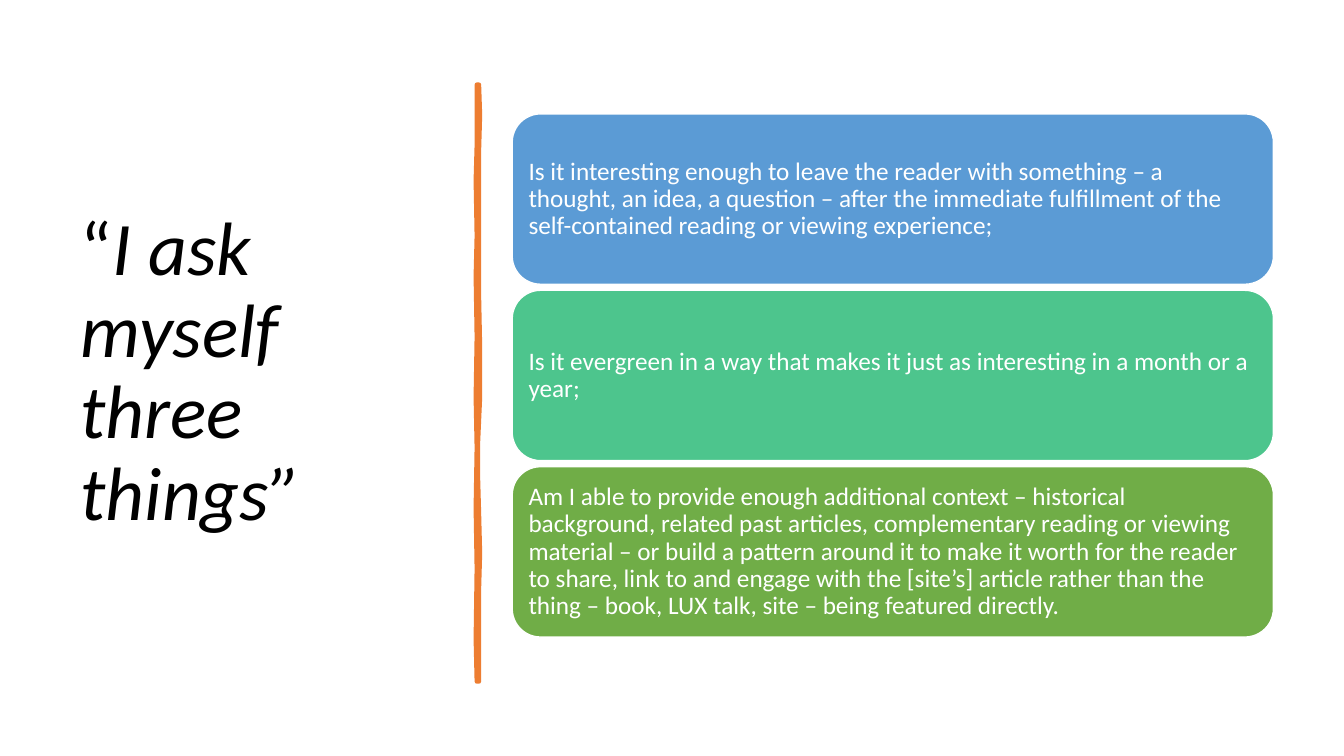
import pptx
import pptx.util
import pptx.dml.color
import pptx.enum.shapes
import pptx.enum.text

Inches, Pt = pptx.util.Inches, pptx.util.Pt
RGBColor = pptx.dml.color.RGBColor
MSO_ANCHOR = pptx.enum.text.MSO_ANCHOR
PP_ALIGN = pptx.enum.text.PP_ALIGN

BLACK = RGBColor(0x00, 0x00, 0x00)
WHITE = RGBColor(0xFF, 0xFF, 0xFF)
ORANGE = RGBColor(0xED, 0x7D, 0x31)
BLUE = RGBColor(0x5B, 0x9B, 0xD5)
TEAL = RGBColor(0x4D, 0xC5, 0x8D)
GREEN = RGBColor(0x70, 0xAD, 0x47)
FONT = "Calibri"

QUESTIONS = [
    (BLUE, "Is it interesting enough to leave the reader with something – a thought, "
           "an idea, a question – after the immediate fulfillment of the "
           "self-contained reading or viewing experience;"),
    (TEAL, "Is it evergreen in a way that makes it just as interesting in a month "
           "or a year;"),
    (GREEN, "Am I able to provide enough additional context – historical background, "
            "related past articles, complementary reading or viewing material – or "
            "build a pattern around it to make it worth for the reader to share, link "
            "to and engage with the [site’s] article rather than the thing – book, "
            "LUX talk, site – being featured directly."),
]

# Edges of the brush stroke: (distance down, offset from the centre), in inches
RIGHT_EDGE = [(0, 0.01), (0.3, 0.02), (0.65, 0.01), (1.4, 0.01), (2.1, 0.01),
              (2.6, 0.02), (3.1, 0.02), (3.55, 0), (3.9, 0), (4.25, 0.01),
              (4.65, 0.02), (5, 0.01), (5.92, 0.01)]
LEFT_EDGE = [(5.92, -0.01), (5.5, -0.02), (4.8, -0.01), (4.2, -0.02), (3.6, -0.01),
             (3.1, -0.02), (2.5, -0.01), (1.9, -0.02), (1.5, -0.01), (0.95, -0.02),
             (0.6, -0.01), (0, -0.01)]


def add_run(p, text, size, color, italic=False):
    r = p.add_run()
    r.text = text
    r.font.name = FONT
    r.font.size = Pt(size)
    r.font.italic = italic
    r.font.color.rgb = color


def format_frame(tf):
    """Wrap the text, centre it vertically and return its left-aligned paragraph."""
    tf.word_wrap = True
    tf.auto_size = pptx.enum.text.MSO_AUTO_SIZE.NONE
    tf.vertical_anchor = MSO_ANCHOR.MIDDLE
    p = tf.paragraphs[0]
    p.alignment = PP_ALIGN.LEFT
    p.line_spacing = 0.9
    return p


def fill_title(s, left, top, width, height):
    sp = s.shapes.title
    sp.left, sp.top = Inches(left), Inches(top)
    sp.width, sp.height = Inches(width), Inches(height)
    p = format_frame(sp.text_frame)
    add_run(p, "“", 54, BLACK)
    add_run(p, "I ask myself three things”", 54, BLACK, italic=True)


def add_brush_stroke(s, center, top):
    points = [(Inches(center + dx), Inches(top + dy))
              for dy, dx in RIGHT_EDGE + LEFT_EDGE]
    builder = s.shapes.build_freeform(*points[0])
    builder.add_line_segments(points[1:], close=True)
    sp = builder.convert_to_shape()
    sp.shadow.inherit = False
    sp.fill.solid()
    sp.fill.fore_color.rgb = ORANGE
    sp.line.color.rgb = ORANGE
    sp.line.width = Pt(3.25)


def add_questions(s, left, top, width, height, gap):
    """Stack the question cards evenly in the given box."""
    card = (height - gap * (len(QUESTIONS) - 1)) / len(QUESTIONS)
    for i, (color, text) in enumerate(QUESTIONS):
        sp = s.shapes.add_shape(
            pptx.enum.shapes.MSO_SHAPE.ROUNDED_RECTANGLE,
            Inches(left), Inches(top + i * (card + gap)), Inches(width), Inches(card))
        sp.shadow.inherit = False
        sp.fill.solid()
        sp.fill.fore_color.rgb = color
        sp.line.color.rgb = WHITE
        sp.line.width = Pt(1)
        tf = sp.text_frame
        tf.margin_left, tf.margin_right = Inches(0.08), Inches(0.1)
        tf.margin_top = tf.margin_bottom = Inches(0.07)
        add_run(format_frame(tf), text, 18, WHITE)


def main():
    prs = pptx.Presentation()
    prs.slide_width, prs.slide_height = Inches(13.33), Inches(7.5)
    s = prs.slides.add_slide(prs.slide_layouts.get_by_name("Title Only"))
    fill_title(s, 0.7, 0.65, 3.74, 6.11)
    add_brush_stroke(s, 4.74, 0.84)
    add_questions(s, 5.08, 1.13, 7.55, 5.19, 0.06)
    prs.save("out.pptx")


if __name__ == "__main__":
    main()
